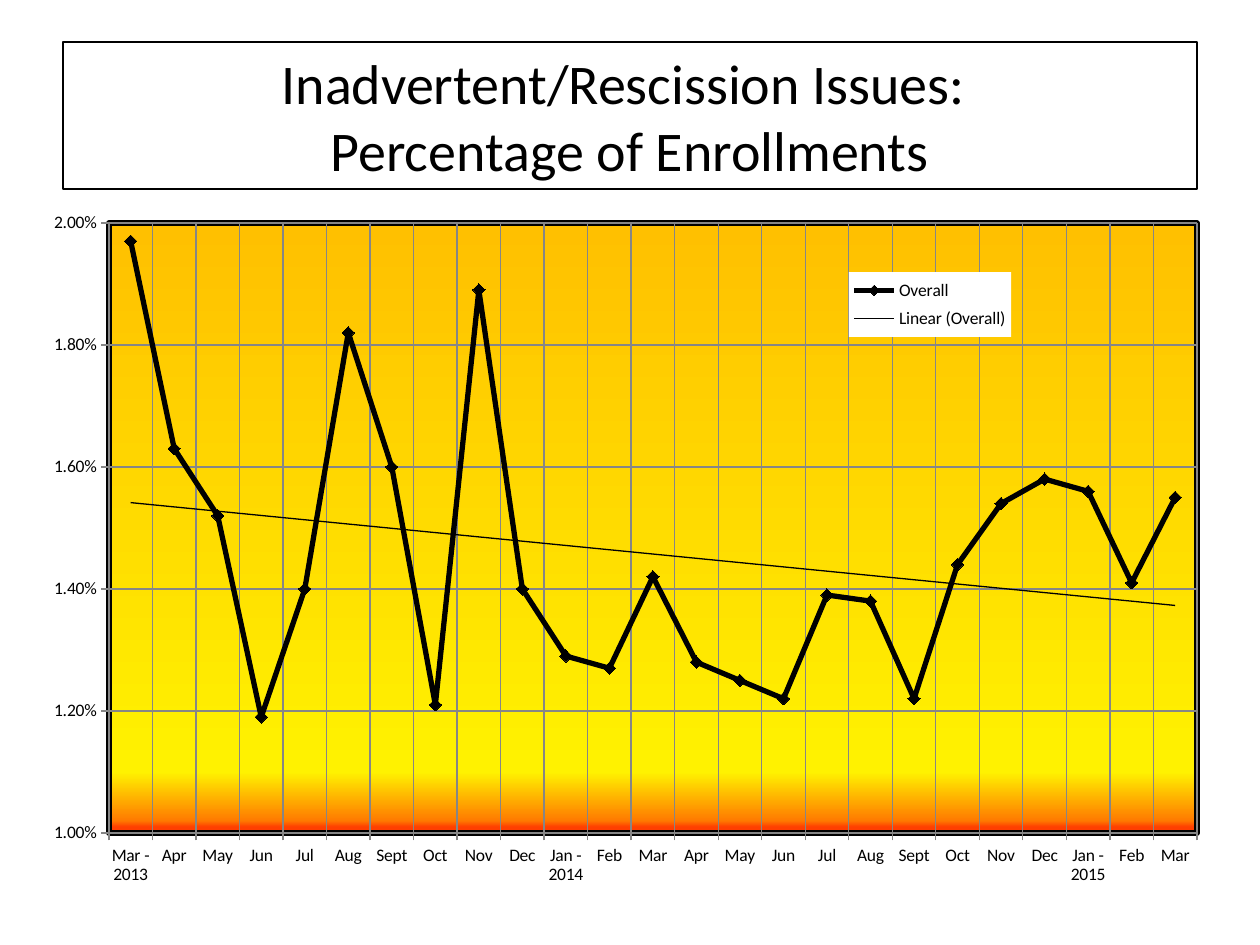
from lxml import etree
from pptx import Presentation
from pptx.chart import data
from pptx.dml import color
from pptx.enum import chart as charts, shapes, text
from pptx.oxml import parse_xml
from pptx.oxml.ns import nsdecls, qn
from pptx.util import Pt

PX = 914400 / 126
FONT = "Calibri"
BLACK, WHITE, GRID = "000000", "FFFFFF", "868686"

YEAR = ["Apr", "May", "Jun", "Jul", "Aug", "Sept", "Oct", "Nov", "Dec"]
MONTHS = ["Mar - 2013", *YEAR, "Jan - 2014", "Feb", "Mar", *YEAR,
          "Jan - 2015", "Feb", "Mar"]
PERCENTAGES = [1.97, 1.63, 1.52, 1.19, 1.40, 1.82, 1.60, 1.21, 1.89, 1.40,
               1.29, 1.27, 1.42, 1.28, 1.25, 1.22, 1.39, 1.38, 1.22, 1.44,
               1.54, 1.58, 1.56, 1.41, 1.55]
GRADIENT = [(0, "FFC000"), (90, "FFF200"), (98, "FF7A00"), (99, "FF3F00")]


def px(value):
    return round(value * PX)


def rgb(value):
    return color.RGBColor.from_string(value)


def set_line(line, value, points):
    line.color.rgb = rgb(value)
    line.width = Pt(points)


def line_xml(points):
    return (f'<a:ln w="{Pt(points)}"><a:solidFill><a:srgbClr val="{BLACK}"/>'
            '</a:solidFill></a:ln>')


def layout_xml(x, y, width, height, inner=False):
    target = '<c:layoutTarget val="inner"/>' if inner else ""
    return parse_xml(
        f'<c:layout {nsdecls("c")}><c:manualLayout>{target}'
        '<c:xMode val="edge"/><c:yMode val="edge"/>'
        f'<c:x val="{x}"/><c:y val="{y}"/><c:w val="{width}"/><c:h val="{height}"/>'
        '</c:manualLayout></c:layout>')


def drop_layout(element):
    for layout in element.findall(qn("c:layout")):
        element.remove(layout)


class SlideBuilder:
    def __init__(self, slide):
        self.slide = slide

    def title(self, content, x, y, width, height, size):
        shape = self.slide.shapes.add_shape(
            shapes.MSO_SHAPE.RECTANGLE, px(x), px(y), px(width), px(height))
        shape.shadow.inherit = False
        shape.fill.background()
        set_line(shape.line, BLACK, 0.75)
        frame = shape.text_frame
        frame.word_wrap = True
        frame.vertical_anchor = text.MSO_ANCHOR.MIDDLE
        paragraph = frame.paragraphs[0]
        paragraph.text = content
        paragraph.alignment = text.PP_ALIGN.CENTER
        paragraph.font.name = FONT
        paragraph.font.size = Pt(size)
        paragraph.font.color.rgb = rgb(BLACK)

    def line_chart(self, name, categories, values, x, y, width, height):
        chart_data = data.CategoryChartData(number_format="0.00%")
        chart_data.categories = categories
        chart_data.add_series(name, values)
        chart = self.slide.shapes.add_chart(
            charts.XL_CHART_TYPE.LINE_MARKERS, px(x), px(y), px(width),
            px(height), chart_data).chart
        chart.has_title = False
        chart.font.name = FONT
        chart.font.size = Pt(10)
        chart.font.color.rgb = rgb(BLACK)
        self.axes(chart)
        self.series(chart.plots[0])
        self.plot_area(chart)
        self.legend(chart)

    def axes(self, chart):
        for axis in (chart.category_axis, chart.value_axis):
            axis.has_major_gridlines = True
            set_line(axis.major_gridlines.format.line, GRID, 0.75)
            set_line(axis.format.line, GRID, 0.75)
            axis.major_tick_mark = charts.XL_TICK_MARK.OUTSIDE
        value_axis = chart.value_axis
        value_axis.minimum_scale = 0.01
        value_axis.maximum_scale = 0.02
        value_axis.major_unit = 0.002
        value_axis.tick_labels.number_format = "0.00%"
        value_axis.tick_labels.number_format_is_linked = False

    def series(self, plot):
        plot.vary_by_categories = False
        series = plot.series[0]
        series.smooth = False
        set_line(series.format.line, BLACK, 3)
        marker = series.marker
        marker.style = charts.XL_MARKER_STYLE.DIAMOND
        marker.size = 7
        marker.format.fill.solid()
        marker.format.fill.fore_color.rgb = rgb(BLACK)
        set_line(marker.format.line, BLACK, 0.75)
        # Linear trend line
        series._element.find(qn("c:cat")).addprevious(parse_xml(
            f'<c:trendline {nsdecls("c", "a")}><c:spPr>{line_xml(0.75)}</c:spPr>'
            '<c:trendlineType val="linear"/><c:dispRSqr val="0"/>'
            '<c:dispEq val="0"/></c:trendline>'))

    def plot_area(self, chart):
        area = chart._chartSpace.chart.plotArea
        drop_layout(area)
        area.insert(0, layout_xml(0.065, 0.034, 0.919, 0.868, inner=True))
        stops = "".join(
            f'<a:gs pos="{position * 1000}"><a:srgbClr val="{value}"/></a:gs>'
            for position, value in GRADIENT)
        area.append(parse_xml(
            f'<c:spPr {nsdecls("c", "a")}><a:gradFill><a:gsLst>{stops}</a:gsLst>'
            f'<a:lin ang="5400000" scaled="0"/></a:gradFill>{line_xml(3)}</c:spPr>'))

    def legend(self, chart):
        chart.has_legend = True
        legend = chart.legend
        legend.position = charts.XL_LEGEND_POSITION.RIGHT
        legend.include_in_layout = False
        element = legend._element
        drop_layout(element)
        overlay = element.find(qn("c:overlay"))
        overlay.addprevious(layout_xml(0.69, 0.104, 0.137, 0.092))
        box = parse_xml(f'<c:spPr {nsdecls("c", "a")}/>')
        fill = etree.SubElement(box, qn("a:solidFill"))
        etree.SubElement(fill, qn("a:srgbClr"), val=WHITE)
        overlay.addnext(box)


def main():
    presentation = Presentation()
    presentation.slide_width, presentation.slide_height = px(1260), px(945)
    builder = SlideBuilder(
        presentation.slides.add_slide(presentation.slide_layouts[6]))

    # Title box
    builder.title("Inadvertent/Rescission Issues: \vPercentage of Enrollments",
                  63, 42, 1134, 147, 32)

    # Monthly percentages with their trend
    builder.line_chart("Overall", MONTHS,
                       [round(value / 100, 4) for value in PERCENTAGES],
                       32, 199, 1184, 703)

    presentation.save("out.pptx")


if __name__ == "__main__":
    main()
